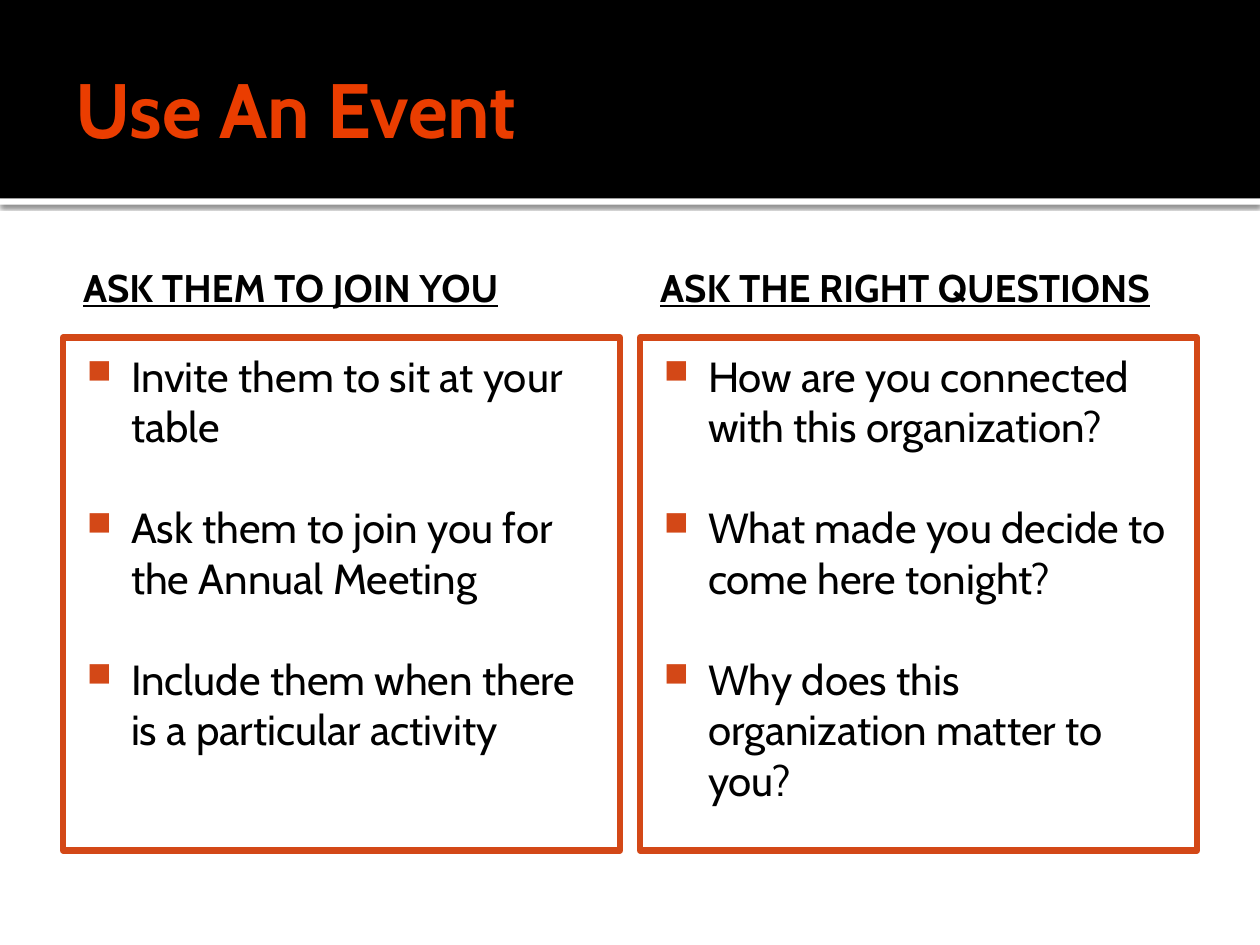
"""Build the "Use An Event" slide with two headed lists."""
from dataclasses import dataclass

from lxml.etree import SubElement
from pptx import Presentation
from pptx.dml.color import RGBColor
from pptx.enum.shapes import MSO_SHAPE
from pptx.enum.text import MSO_ANCHOR, PP_ALIGN
from pptx.oxml.ns import qn
from pptx.util import Inches, Pt

WIDTH, HEIGHT = 10, 7.5


@dataclass(frozen=True)
class Theme:
    """Colours, font and type sizes of the slide."""
    font: str = "Cabin"
    black: str = "000000"
    white: str = "FFFFFF"
    title: str = "EA3D00"
    accent: str = "D34817"
    title_size: int = 44
    heading_size: int = 22
    body_size: int = 24
    item_gap: int = 29
    border: float = 3.75


@dataclass(frozen=True)
class Area:
    """A rectangle in inches."""
    left: float
    top: float
    width: float
    height: float

    def lengths(self) -> list:
        """Return the position and size as lengths."""
        return [Inches(v) for v in (self.left, self.top, self.width, self.height)]


@dataclass(frozen=True)
class Column:
    """A heading with its list items."""
    heading: str
    items: tuple[str, ...]


@dataclass(frozen=True)
class Grid:
    """Equal columns between the side margins."""
    margin: float = 0.05 * WIDTH
    gap: float = 0.016 * WIDTH
    count: int = 2

    def area(self, column: int, top: float, height: float) -> Area:
        """Return the cell of a column at a given height."""
        inner = WIDTH - 2 * self.margin
        width = (inner - self.gap * (self.count - 1)) / self.count
        return Area(self.margin + column * (width + self.gap), top, width, height)


THEME = Theme()
GRID = Grid()
BAND = 0.21 * HEIGHT
COLUMNS = (
    Column("ASK THEM TO JOIN YOU", (
        "Invite them to sit at your table",
        "Ask them to join you for the Annual Meeting",
        "Include them when there is a particular activity",
    )),
    Column("ASK THE RIGHT QUESTIONS", (
        "How are you connected with this organization?",
        "What made you decide to come here tonight?",
        "Why does this organization matter to you?",
    )),
)


def add_box(slide, area: Area, fill: str, line: str | None = None):
    """Add a filled rectangle without a shadow."""
    shape = slide.shapes.add_shape(MSO_SHAPE.RECTANGLE, *area.lengths())
    shape.shadow.inherit = False
    shape.fill.solid()
    shape.fill.fore_color.rgb = RGBColor.from_string(fill)
    if line:
        shape.line.color.rgb = RGBColor.from_string(line)
        shape.line.width = Pt(THEME.border)
    else:
        shape.line.fill.background()
    return shape


def add_shadow(shape) -> None:
    """Give a shape a soft shadow that falls downwards."""
    effects = shape.element.spPr.find(qn("a:effectLst"))
    shadow = SubElement(effects, qn("a:outerShdw"), blurRad=str(Pt(2.5)),
                        dist=str(Pt(0.8)), dir="5400000", algn="tl", rotWithShape="0")
    color = SubElement(shadow, qn("a:srgbClr"), val=THEME.black)
    SubElement(color, qn("a:alpha"), val="60000")


def add_bullet(paragraph) -> None:
    """Give a paragraph a hanging square bullet."""
    properties = paragraph._p.get_or_add_pPr()
    properties.set("marL", str(Inches(0.48)))
    properties.set("indent", str(Inches(-0.35)))
    color = SubElement(properties, qn("a:buClr"))
    SubElement(color, qn("a:srgbClr"), val=THEME.accent)
    SubElement(properties, qn("a:buSzPct"), val="80000")
    SubElement(properties, qn("a:buChar"), char="■")


def write_text(shape, *texts: str, size: int, color: str = THEME.black,
               bold: bool = False, underline: bool = False, bullets: bool = False,
               anchor: MSO_ANCHOR = MSO_ANCHOR.MIDDLE, gap: float = 0,
               insets: tuple = (0.1, 0.05, 0.05, 0.05)) -> None:
    """Write one paragraph for each text in the given format."""
    frame = shape.text_frame
    frame.word_wrap = True
    frame.vertical_anchor = anchor
    (frame.margin_left, frame.margin_top,
     frame.margin_right, frame.margin_bottom) = map(Inches, insets)
    for index, text in enumerate(texts):
        paragraph = frame.add_paragraph() if index else frame.paragraphs[0]
        paragraph.alignment = PP_ALIGN.LEFT
        paragraph.space_before = Pt(gap if index else 0)
        if bullets:
            add_bullet(paragraph)
        run = paragraph.add_run()
        run.text = text
        run.font.name = THEME.font
        run.font.size = Pt(size)
        run.font.bold = bold
        run.font.underline = underline
        run.font.color.rgb = RGBColor.from_string(color)


def add_header(slide, title: str) -> None:
    """Draw the black band, its edge and the title."""
    add_shadow(add_box(slide, Area(0, BAND, WIDTH, 0.05), THEME.white))
    add_box(slide, Area(0, 0, WIDTH, BAND), THEME.black)
    area = Area(GRID.margin, 0.17, WIDTH - 2 * GRID.margin, 1.37)
    write_text(slide.shapes.add_textbox(*area.lengths()), title,
               size=THEME.title_size, color=THEME.title, bold=True)


def add_column(slide, index: int, column: Column) -> None:
    """Draw a heading above its bordered list."""
    heading = slide.shapes.add_textbox(*GRID.area(index, 1.86, 0.78).lengths())
    write_text(heading, column.heading, size=THEME.heading_size, bold=True,
               underline=True, insets=(0.16, 0.1, 0.1, 0.05))
    panel = add_box(slide, GRID.area(index, 2.68, 4.07), THEME.white, THEME.accent)
    write_text(panel, *column.items, size=THEME.body_size, bullets=True,
               anchor=MSO_ANCHOR.TOP, gap=THEME.item_gap, insets=(0.06, 0.1, 0.1, 0.05))


def main() -> None:
    """Build and save the presentation."""
    presentation = Presentation()
    presentation.slide_width = Inches(WIDTH)
    presentation.slide_height = Inches(HEIGHT)
    slide = presentation.slides.add_slide(presentation.slide_layouts[6])
    add_header(slide, "Use An Event")
    for index, column in enumerate(COLUMNS):
        add_column(slide, index, column)
    presentation.save("out.pptx")


if __name__ == "__main__":
    main()
